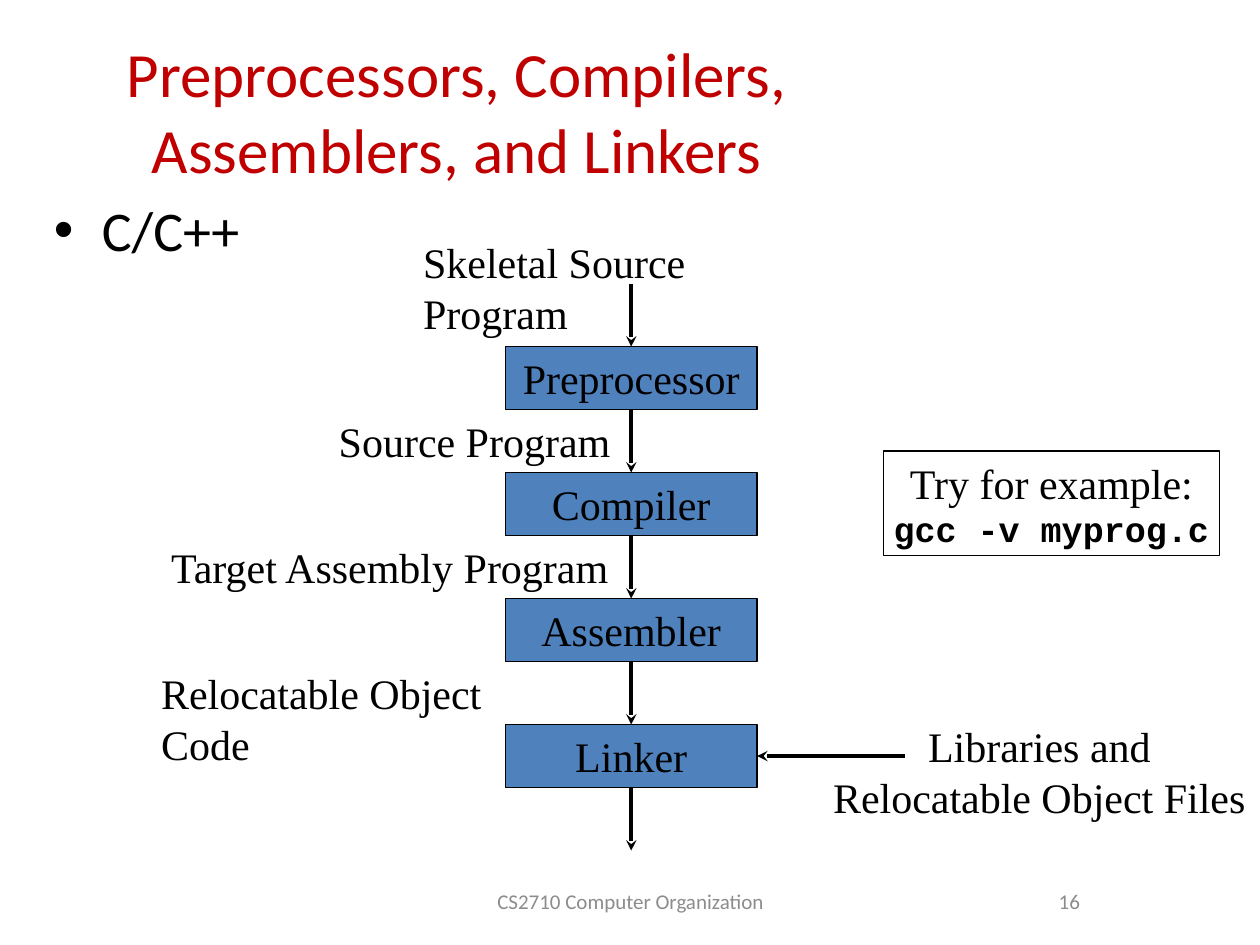
from pptx import Presentation
from pptx.dml.color import RGBColor
from pptx.enum.shapes import MSO_CONNECTOR, MSO_SHAPE
from pptx.enum.text import MSO_ANCHOR, PP_ALIGN
from pptx.oxml.ns import qn
from pptx.util import Inches, Pt
from lxml import etree

RECT = MSO_SHAPE.RECTANGLE
LINE = MSO_CONNECTOR.STRAIGHT
TOP, MIDDLE = MSO_ANCHOR.TOP, MSO_ANCHOR.MIDDLE
LEFT, CENTER, RIGHT = PP_ALIGN.LEFT, PP_ALIGN.CENTER, PP_ALIGN.RIGHT

SANS, SERIF, MONO = "Calibri", "Times New Roman", "Courier New"
BLACK, RED, GRAY, BLUE = "000000", "C00000", "8C8C8C", "4F81BD"

STAGES = ["Preprocessor", "Compiler", "Assembler", "Linker"]
STAGE_LEFT, STAGE_TOP, STAGE_WIDTH, STAGE_HEIGHT = 4.01, 2.75, 2, 0.5
STEP = 1
AXIS = STAGE_LEFT + STAGE_WIDTH / 2


def color(value):
    return RGBColor.from_string(value)


def style(para, font, size, ink, bold=False):
    for run in para.runs:
        run.font.name = font
        run.font.size = Pt(size)
        run.font.bold = bold
        run.font.color.rgb = color(ink)


def write(shape, text, font=SERIF, size=24, ink=BLACK, align=LEFT,
          anchor=TOP, wrap=False):
    frame = shape.text_frame
    frame.text = text
    frame.word_wrap = wrap
    frame.vertical_anchor = anchor
    for para in frame.paragraphs:
        para.alignment = align
        style(para, font, size, ink)


def add_text(slide, box, text, **look):
    shape = slide.shapes.add_textbox(*map(Inches, box))
    write(shape, text, **look)
    return shape


def add_box(slide, box, text, fill=None):
    shape = slide.shapes.add_shape(RECT, *map(Inches, box))
    shape.shadow.inherit = False
    if fill:
        shape.fill.solid()
        shape.fill.fore_color.rgb = color(fill)
    else:
        shape.fill.background()
    shape.line.color.rgb = color(BLACK)
    shape.line.width = Pt(0.75)
    write(shape, text, align=CENTER, anchor=MIDDLE)
    return shape


def add_arrow(slide, start, end):
    arrow = slide.shapes.add_connector(LINE, *map(Inches, start + end))
    arrow.line.color.rgb = color(BLACK)
    arrow.line.width = Pt(2)
    head = etree.SubElement(arrow.line._get_or_add_ln(), qn("a:tailEnd"))
    head.set("type", "stealth")
    etree.SubElement(arrow._element.spPr, qn("a:effectLst"))


def add_bullet(para, indent):
    props = para._p.get_or_add_pPr()
    props.set("marL", str(Inches(indent)))
    props.set("indent", str(-Inches(indent)))
    etree.SubElement(props, qn("a:buFont")).set("typeface", "Arial")
    etree.SubElement(props, qn("a:buChar")).set("char", "•")


def add_frame(slide):
    """Add the title, the bullet and the footer."""
    add_text(slide, (0, 0.25, 7.25, 1.25),
             "Preprocessors, Compilers, Assemblers, and Linkers", font=SANS,
             size=36, ink=RED, align=CENTER, anchor=MIDDLE, wrap=True)
    body = add_text(slide, (0.33, 1.5, 8.08, 5.03), "C/C++",
                    font=SANS, size=32, wrap=True)
    add_bullet(body.text_frame.paragraphs[0], 0.38)
    small = dict(font=SANS, size=12, ink=GRAY, anchor=MIDDLE, wrap=True)
    add_text(slide, (3.42, 6.95, 3.17, 0.4), "CS2710 Computer Organization",
             align=CENTER, **small)
    add_text(slide, (7.17, 6.95, 1.5, 0.4), "16", align=RIGHT, **small)


def add_chain(slide):
    """Add the stages with an arrow into each and one out of the last."""
    for row, name in enumerate(STAGES):
        top = STAGE_TOP + row * STEP
        add_box(slide, (STAGE_LEFT, top, STAGE_WIDTH, STAGE_HEIGHT), name,
                BLUE)
    for row in range(len(STAGES) + 1):
        end = STAGE_TOP + row * STEP
        add_arrow(slide, (AXIS, end - STEP + STAGE_HEIGHT), (AXIS, end))


def add_labels(slide):
    add_text(slide, (3.26, 1.83, 3.51, 0.5), "Skeletal Source Program")
    add_text(slide, (2.59, 3.25, 2.36, 0.5), "Source Program")
    add_text(slide, (1.26, 4.25, 3.72, 0.5), "Target Assembly Program")
    add_text(slide, (1.18, 5.25, 3.4, 0.91), "Relocatable Object Code",
             wrap=True)
    add_text(slide, (6.5, 5.67, 3.5, 0.91),
             "Libraries and\nRelocatable Object Files", align=CENTER)
    add_arrow(slide, (7.18, 6), (STAGE_LEFT + STAGE_WIDTH, 6))


def add_example(slide):
    box = add_box(slide, (7.01, 3.58, 2.67, 0.83),
                  "Try for example:\ngcc -v myprog.c")
    style(box.text_frame.paragraphs[1], MONO, 20, BLACK, bold=True)


def main():
    deck = Presentation()
    deck.slide_width, deck.slide_height = Inches(10), Inches(7.5)
    slide = deck.slides.add_slide(deck.slide_layouts[6])
    add_frame(slide)
    add_chain(slide)
    add_labels(slide)
    add_example(slide)
    deck.save("out.pptx")


if __name__ == "__main__":
    main()
